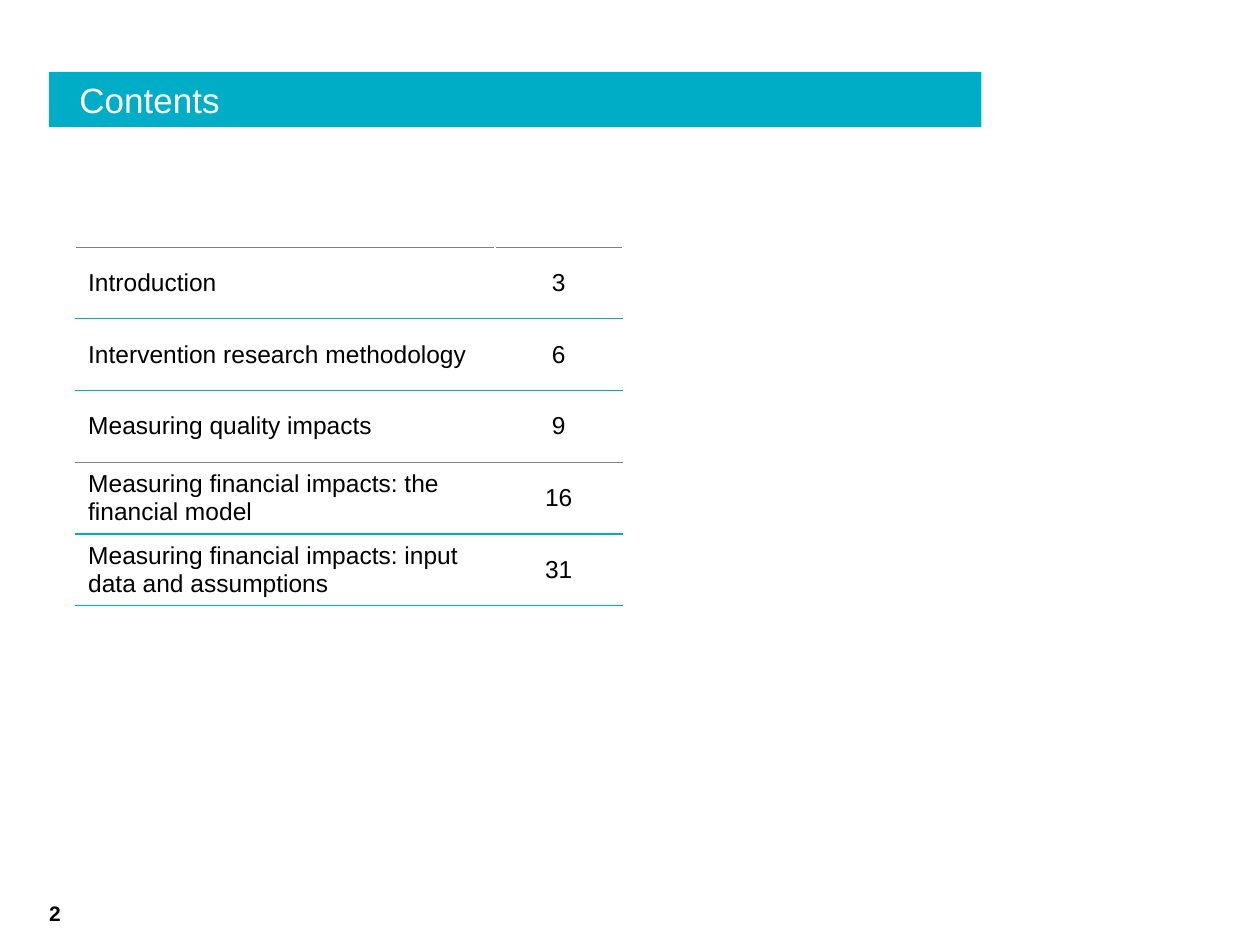
from dataclasses import dataclass

from lxml.etree import SubElement
from pptx import Presentation
from pptx.dml.color import RGBColor
from pptx.enum.shapes import MSO_SHAPE
from pptx.enum.text import MSO_ANCHOR as Anchor, PP_ALIGN as Align
from pptx.oxml.ns import qn
from pptx.util import Inches, Pt


@dataclass(frozen=True)
class Theme:
    font: str = "Arial"
    teal: str = "00ADC6"
    grey: str = "808080"
    white: str = "FFFFFF"
    black: str = "000000"
    title_size: int = 20
    entry_size: int = 14
    number_size: int = 12


@dataclass(frozen=True)
class Entry:
    section: str
    page: int


@dataclass(frozen=True)
class Rule:
    color: str
    width: float = 1


THEME = Theme()
ENTRIES = [
    Entry("Introduction", 3),
    Entry("Intervention research methodology", 6),
    Entry("Measuring quality impacts", 9),
    Entry("Measuring financial impacts: the financial model", 16),
    Entry("Measuring financial impacts: input data and assumptions", 31),
]
TEAL_RULE = Rule(THEME.teal)
GREY_RULE = Rule(THEME.grey, 0.5)
SIDE_RULE = Rule(THEME.white)
# One rule above each entry, and one below the last
ROW_RULES = [GREY_RULE, TEAL_RULE, TEAL_RULE, GREY_RULE, TEAL_RULE, Rule(THEME.teal, 0.5)]
COLUMN_WIDTHS = [3.33, 1.01]
ROW_HEIGHT = 0.57


def write_text(frame, text: str, *, size: int, color: str = THEME.black,
               bold: bool = False, align: Align = Align.LEFT) -> None:
    paragraph = frame.paragraphs[0]
    paragraph.alignment = align
    run = paragraph.add_run()
    run.text = text
    run.font.name = THEME.font
    run.font.size = Pt(size)
    run.font.bold = bold
    run.font.color.rgb = RGBColor.from_string(color)


def set_frame(frame, anchor: Anchor, left: float = 0) -> None:
    """Wrap the text and drop all margins but the left one."""
    frame.word_wrap = True
    frame.vertical_anchor = anchor
    frame.margin_left = Inches(left)
    frame.margin_top = frame.margin_right = frame.margin_bottom = 0


def set_borders(cell, top: Rule, bottom: Rule) -> None:
    properties = cell._tc.get_or_add_tcPr()
    sides = {"a:lnL": SIDE_RULE, "a:lnR": SIDE_RULE, "a:lnT": top, "a:lnB": bottom}
    for position, (tag, rule) in enumerate(sides.items()):
        line = SubElement(properties, qn(tag), w=str(Pt(rule.width)))
        fill = SubElement(line, qn("a:solidFill"))
        SubElement(fill, qn("a:srgbClr"), val=rule.color)
        properties.insert(position, line)


def add_title(slide, text: str) -> None:
    banner = slide.shapes.add_shape(
        MSO_SHAPE.RECTANGLE, Inches(0.39), Inches(0.57), Inches(7.4), Inches(0.44))
    banner.shadow.inherit = False
    banner.fill.solid()
    banner.fill.fore_color.rgb = RGBColor.from_string(THEME.teal)
    banner.line.fill.background()
    set_frame(banner.text_frame, Anchor.MIDDLE, left=0.24)
    write_text(banner.text_frame, text, size=THEME.title_size, color=THEME.white)


def add_contents(slide, entries: list[Entry]) -> None:
    table = slide.shapes.add_table(
        len(entries), len(COLUMN_WIDTHS), Inches(0.6), Inches(1.96),
        Inches(sum(COLUMN_WIDTHS)), Inches(ROW_HEIGHT * len(entries))).table
    table.first_row = table.horz_banding = False
    for column, width in zip(table.columns, COLUMN_WIDTHS):
        column.width = Inches(width)
    for index, entry in enumerate(entries):
        texts = [(entry.section, Align.LEFT), (str(entry.page), Align.CENTER)]
        for cell, (text, align) in zip(table.rows[index].cells, texts):
            cell.vertical_anchor = Anchor.MIDDLE
            cell.fill.solid()
            cell.fill.fore_color.rgb = RGBColor.from_string(THEME.white)
            set_borders(cell, ROW_RULES[index], ROW_RULES[index + 1])
            write_text(cell.text_frame, text, size=THEME.entry_size, align=align)


def add_page_number(slide, number: int) -> None:
    box = slide.shapes.add_textbox(Inches(0.39), Inches(7.15), Inches(0.33), Inches(0.2))
    set_frame(box.text_frame, Anchor.BOTTOM)
    write_text(box.text_frame, str(number), size=THEME.number_size, bold=True)


def main() -> None:
    deck = Presentation()
    deck.slide_width, deck.slide_height = Inches(10), Inches(7.5)
    slide = deck.slides.add_slide(deck.slide_layouts[6])
    add_title(slide, "Contents")
    add_contents(slide, ENTRIES)
    add_page_number(slide, 2)
    deck.save("out.pptx")


if __name__ == "__main__":
    main()
